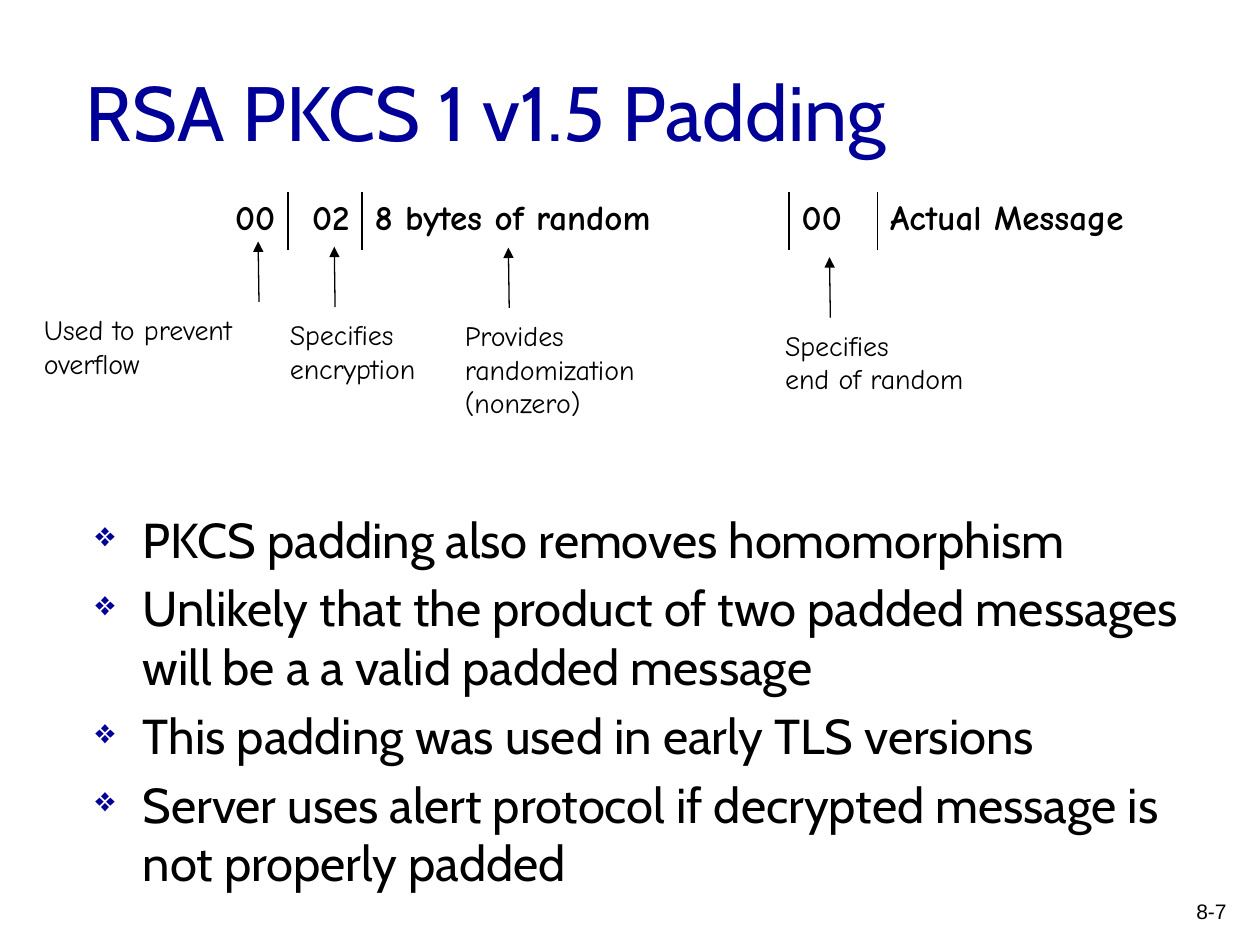
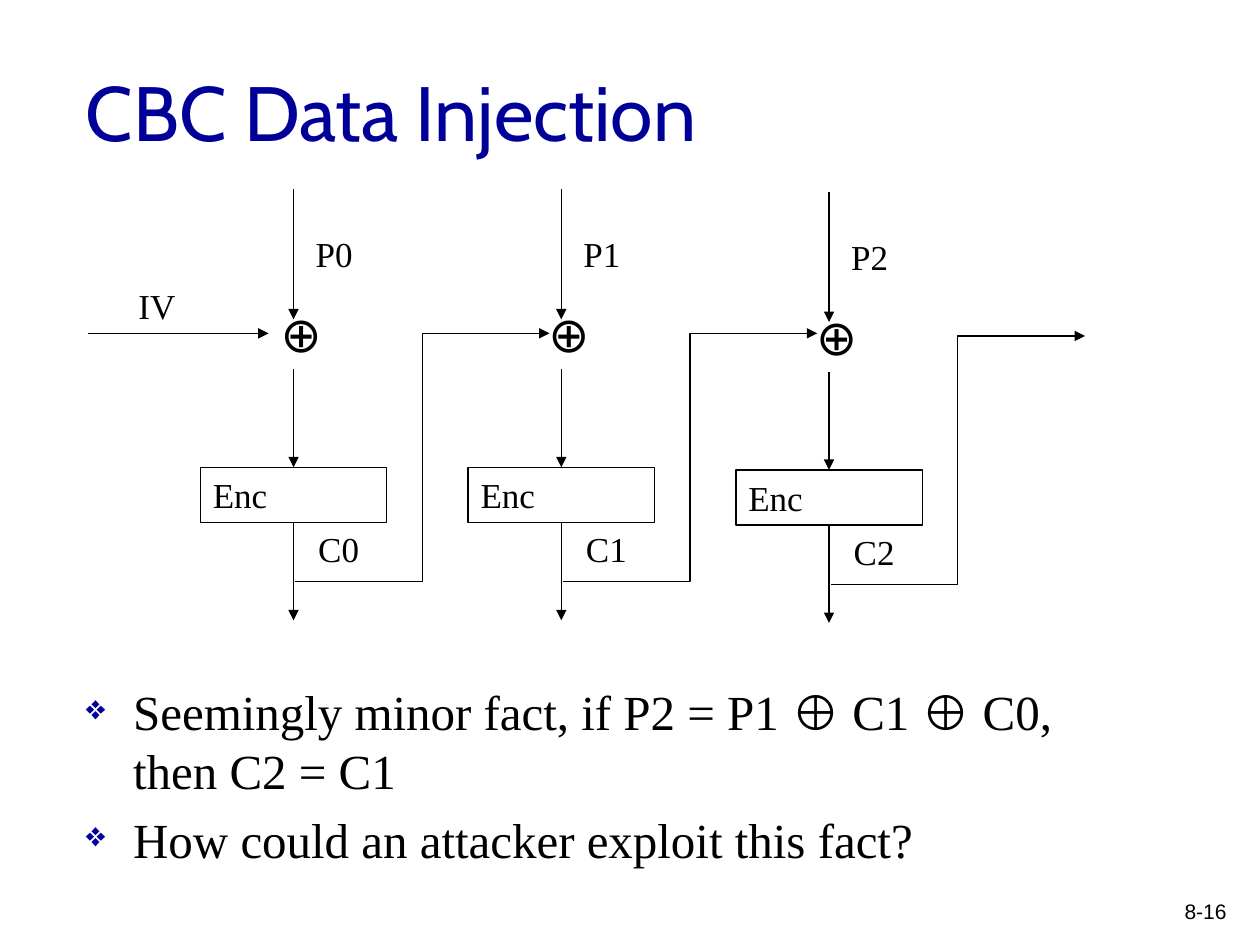
from lxml import etree
from pptx import Presentation
from pptx.dml.color import RGBColor
from pptx.enum import shapes as kinds, text as txt
from pptx.oxml import ns
from pptx.util import Pt


class Theme:
    ink, navy, white = "000000", "000099", "FFFFFF"
    head, hand, serif, plain = "Cabin", "Comic Neue", "Times New Roman", "Arial"
    title, body, label, note, foot = 44, 28, 20, 16, 12
    line = 0.75


STRAIGHT, ELBOW = kinds.MSO_CONNECTOR.STRAIGHT, kinds.MSO_CONNECTOR.ELBOW
LEFT, RIGHT = txt.PP_ALIGN.LEFT, txt.PP_ALIGN.RIGHT
TOP, MIDDLE = txt.MSO_ANCHOR.TOP, txt.MSO_ANCHOR.MIDDLE


def write(spot, copy, font=Theme.serif, size=Theme.label, color=Theme.ink,
          bold=False, align=LEFT, anchor=TOP, bullet=None):
    """Fill a text frame, or a new text box if spot is (page, x, y, w, h).

    A newline starts a paragraph, a vertical tab breaks a line.
    """
    if isinstance(spot, tuple):
        page, *box = spot
        spot = page.shapes.add_textbox(*map(Pt, box)).text_frame
    spot.word_wrap = True
    spot.vertical_anchor = anchor
    spot.text = copy
    for para in spot.paragraphs:
        para.alignment = align
        for run in para.runs:
            run.font.name, run.font.size, run.font.bold = font, Pt(size), bold
            run.font.color.rgb = RGBColor.from_string(color)
        if bullet:
            para.space_before = Pt(0.2 * size)
            props = para._p.get_or_add_pPr()
            props.set("marL", str(Pt(27)))
            props.set("indent", str(Pt(-27)))
            tint = etree.SubElement(props, ns.qn("a:buClr"))
            etree.SubElement(tint, ns.qn("a:srgbClr"), val=Theme.navy)
            etree.SubElement(props, ns.qn("a:buSzPct"), val="70000")
            etree.SubElement(props, ns.qn("a:buChar"), char=bullet)


def arrow(page, x1, y1, x2, y2, kind=STRAIGHT):
    wire = page.shapes.add_connector(kind, Pt(x1), Pt(y1), Pt(x2), Pt(y2))
    wire.line.width = Pt(Theme.line)
    wire.line.color.rgb = RGBColor.from_string(Theme.ink)
    etree.SubElement(wire.line._ln, ns.qn("a:tailEnd"), type="triangle")
    etree.SubElement(wire._element.spPr, ns.qn("a:effectLst"))
    return wire


deck = Presentation()
deck.slide_width, deck.slide_height = Pt(720), Pt(540)

# Title, bullets and page number of every slide
pages = []
for title, number, font, box, points in (
    ("RSA PKCS 1 v1.5 Padding", "8-7", Theme.head, (47.5, 287.5, 653, 82), (
        "PKCS padding also removes homomorphism",
        "Unlikely that the product of two padded messages will be a a valid padded message",
        "This padding was used in early TLS versions",
        "Server uses alert protocol if decrypted message is not properly padded")),
    ("CBC Data Injection", "8-16", Theme.serif, (42, 386, 656, 106), (
        "Seemingly minor fact, if P2 = P1 ⊕ C1 ⊕ C0,\vthen C2 = C1",
        "How could an attacker exploit this fact?")),
):
    page = deck.slides.add_slide(deck.slide_layouts[6])
    write((page, 654.5, 510, 53.5, 24), number, font=Theme.plain,
          size=Theme.foot, align=RIGHT)
    write((page, 42, 18, 612, 90), title, font=Theme.head, size=Theme.title,
          color=Theme.navy, anchor=MIDDLE)
    write((page, *box), "\n".join(points), font=font, size=Theme.body, bullet="❖")
    pages.append(page)
pad, chain = pages

# Padding layout: one row of fields, ruled between the fields only
fields = (("00", 44.5, RIGHT), ("02", 42.5, RIGHT), ("8 bytes of random", 244, LEFT),
          ("00", 50.5, LEFT), ("Actual Message", 170.5, LEFT))
width = sum(field[1] for field in fields)
grid = pad.shapes.add_table(1, len(fields), Pt(120), Pt(110), Pt(width), Pt(29.5)).table
grid.first_row = grid.horz_banding = False
for i, (name, wide, align) in enumerate(fields):
    grid.columns[i].width = Pt(wide)
    cell = grid.cell(0, i)
    write(cell.text_frame, name, font=Theme.hand, bold=True, align=align)
    first, last = i == 0, i == len(fields) - 1
    for side, color, thick in (("L", Theme.white if first else Theme.ink, 1),
                               ("R", Theme.white if last else Theme.ink, 1),
                               ("T", Theme.white, 1), ("B", Theme.white, 3)):
        edge = etree.SubElement(cell._tc.get_or_add_tcPr(), ns.qn("a:ln" + side),
                                w=str(Pt(thick)))
        fill = etree.SubElement(edge, ns.qn("a:solidFill"))
        etree.SubElement(fill, ns.qn("a:srgbClr"), val=color)
    cell.fill.background()

# Notes that point up at the fields
for note, x, y, wide, tip in (
    ("Used to prevent\voverflow", 18, 175, 141, 147.5),
    ("Specifies\vencryption", 158.5, 178, 95, 191),
    ("Provides\vrandomization\v(nonzero)", 258.5, 178.5, 120, 290.5),
    ("Specifies\vend of random", 441.5, 184, 123, 474),
):
    arrow(pad, tip + 0.5, y - 2.5, tip, y - 37)
    write((pad, x, y, wide, 46), note, font=Theme.hand, size=Theme.note)

# Cipher chain: equal stages, the last one set slightly lower
arrow(chain, 50.5, 190.5, 153.5, 190.5)
write((chain, 72, 159, 54, 31.5), "IV")
for i, drop in enumerate((0, 0, 1.5)):
    x = 167.75 + 153 * i
    write((chain, x - 14.5, 170 + drop, 29, 41), "⊕", font=Theme.hand, size=Theme.body)
    arrow(chain, x, 108 + drop, x, 182.5 + drop)
    write((chain, x + 5.5, 129.5 + drop, 54, 31.5), f"P{i}")

    enc = chain.shapes.add_shape(kinds.MSO_SHAPE.RECTANGLE, Pt(x - 53.25),
                                 Pt(267 + drop), Pt(106.5), Pt(31.5))
    enc.shadow.inherit = False
    enc.fill.background()
    enc.line.width = Pt(Theme.line)
    enc.line.color.rgb = RGBColor.from_string(Theme.ink)
    write(enc.text_frame, "Enc")
    arrow(chain, x, 211 + drop, x, 267 + drop).end_connect(enc, 0)
    arrow(chain, x, 298.5 + drop, x, 354.5 + drop).begin_connect(enc, 2)

    write((chain, x + 7, 298 + drop, 54, 31.5), f"C{i}")
    arrow(chain, x + 1, 332.5 + drop, x + 146.25, 190.5 + drop, ELBOW)

deck.save("out.pptx")
